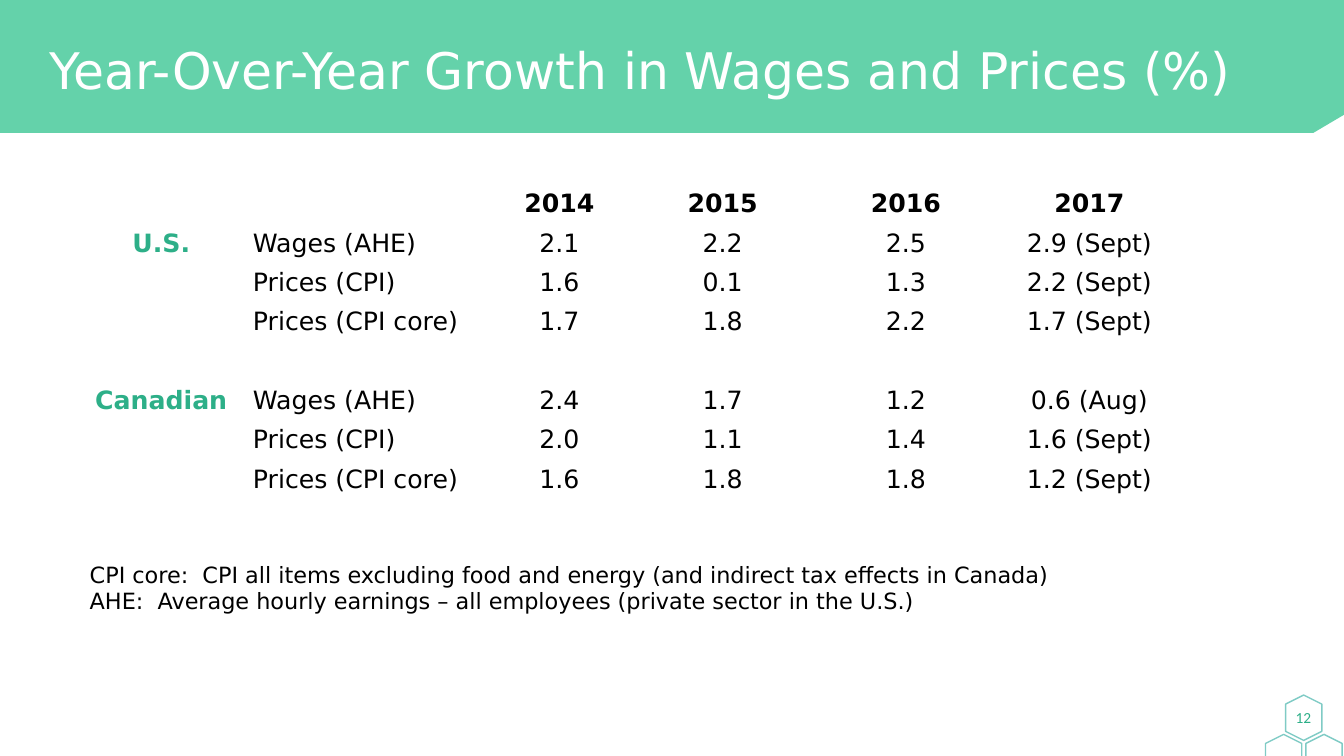
import pptx
import pptx.util
import pptx.dml.color
import pptx.enum.shapes
import pptx.enum.text
import pptx.oxml.ns
import lxml.etree

Pt = pptx.util.Pt
ALIGN = pptx.enum.text.PP_ALIGN
ANCHOR = pptx.enum.text.MSO_ANCHOR
GREEN = "2DAF88"
BLACK = "000000"


def color(hex_string):
    return pptx.dml.color.RGBColor.from_string(hex_string)


def write(para, text, size, hex_string, align, bold=False, name="DejaVu Sans"):
    para.text = text
    para.alignment = align
    para.font.size = Pt(size)
    para.font.name = name
    para.font.bold = bold
    para.font.color.rgb = color(hex_string)


deck = pptx.Presentation()
deck.slide_width = Pt(960)
deck.slide_height = Pt(540)
page = deck.slides.add_slide(deck.slide_layouts[6])

outline = page.shapes.build_freeform(0, 0, scale=Pt(1))
outline.add_line_segments([(960, 0), (960, 82), (938, 95), (0, 95)])
band = outline.convert_to_shape()
band.shadow.inherit = False
band.fill.solid()
band.fill.fore_color.rgb = color("64D2AA")
band.line.fill.background()

for left, top in [(915, 499.7), (929.5, 527.8), (900.7, 527.8)]:
    hexagon = page.shapes.add_shape(
        pptx.enum.shapes.MSO_SHAPE.HEXAGON, Pt(left), Pt(top), Pt(32.4), Pt(25.9))
    hexagon.rotation = 90
    hexagon.shadow.inherit = False
    hexagon.fill.background()
    hexagon.line.width = Pt(1)
    hexagon.line.color.rgb = color("00998D")
    line_color = hexagon.line._ln.find(".//" + pptx.oxml.ns.qn("a:srgbClr"))
    lxml.etree.SubElement(line_color, pptx.oxml.ns.qn("a:alpha"), val="50000")

title = page.shapes.add_textbox(Pt(28), Pt(9.4), Pt(903), Pt(85.7))
title.text_frame.word_wrap = True
title.text_frame.vertical_anchor = ANCHOR.MIDDLE
title_para = title.text_frame.paragraphs[0]
title_para.line_spacing = 0.9
write(title_para, "Year-Over-Year Growth in Wages and Prices (%)", 36, "FFFFFF", ALIGN.LEFT)

number = page.shapes.add_textbox(Pt(916.6), Pt(500.4), Pt(28.8), Pt(23.8))
number.text_frame.word_wrap = True
number.text_frame.vertical_anchor = ANCHOR.MIDDLE
number.text_frame.margin_left = number.text_frame.margin_right = 0
write(number.text_frame.paragraphs[0], "12", 11, GREEN, ALIGN.CENTER, name="Calibri")

rows = [
    ["", "", "2014", "2015", "2016", "2017"],
    ["U.S.", "Wages (AHE)", "2.1", "2.2", "2.5", "2.9 (Sept)"],
    ["", "Prices (CPI)", "1.6", "0.1", "1.3", "2.2 (Sept)"],
    ["", "Prices (CPI core)", "1.7", "1.8", "2.2", "1.7 (Sept)"],
    [""] * 6,
    ["Canadian", "Wages (AHE)", "2.4", "1.7", "1.2", "0.6 (Aug)"],
    ["", "Prices (CPI)", "2.0", "1.1", "1.4", "1.6 (Sept)"],
    ["", "Prices (CPI core)", "1.6", "1.8", "1.8", "1.2 (Sept)"],
    [""] * 6,
]
notes = [
    "CPI core:  CPI all items excluding food and energy (and indirect tax effects in Canada)",
    "AHE:  Average hourly earnings – all employees (private sector in the U.S.)",
]
row_heights = [28.1] * 8 + [94]
column_widths = [116.6, 175, 102.2, 131, 131, 131]

growth = page.shapes.add_table(
    len(rows), len(column_widths), Pt(56.9), Pt(131.8),
    Pt(sum(column_widths)), Pt(sum(row_heights))).table
growth.first_row = False
growth.horz_banding = False
for column, width in zip(growth.columns, column_widths):
    column.width = Pt(width)

for row_index, values in enumerate(rows):
    growth.rows[row_index].height = Pt(row_heights[row_index])
    for column_index, value in enumerate(values):
        cell = growth.cell(row_index, column_index)
        cell.fill.background()
        cell.margin_top = cell.margin_bottom = Pt(2)
        cell.vertical_anchor = ANCHOR.MIDDLE
        if value:
            write(cell.text_frame.paragraphs[0], value, 18,
                  GREEN if column_index == 0 else BLACK,
                  ALIGN.JUSTIFY if column_index == 1 else ALIGN.CENTER,
                  bold=row_index == 0 or column_index == 0)

for row_index in (4, 8):
    growth.cell(row_index, 0).merge(growth.cell(row_index, 5))

note_cell = growth.cell(8, 0)
note_cell.vertical_anchor = ANCHOR.TOP
note_cell.margin_top = Pt(45.5)
note_cell.text_frame.add_paragraph()
for para, note in zip(note_cell.text_frame.paragraphs, notes):
    write(para, note, 16, BLACK, ALIGN.JUSTIFY)

deck.save("out.pptx")
